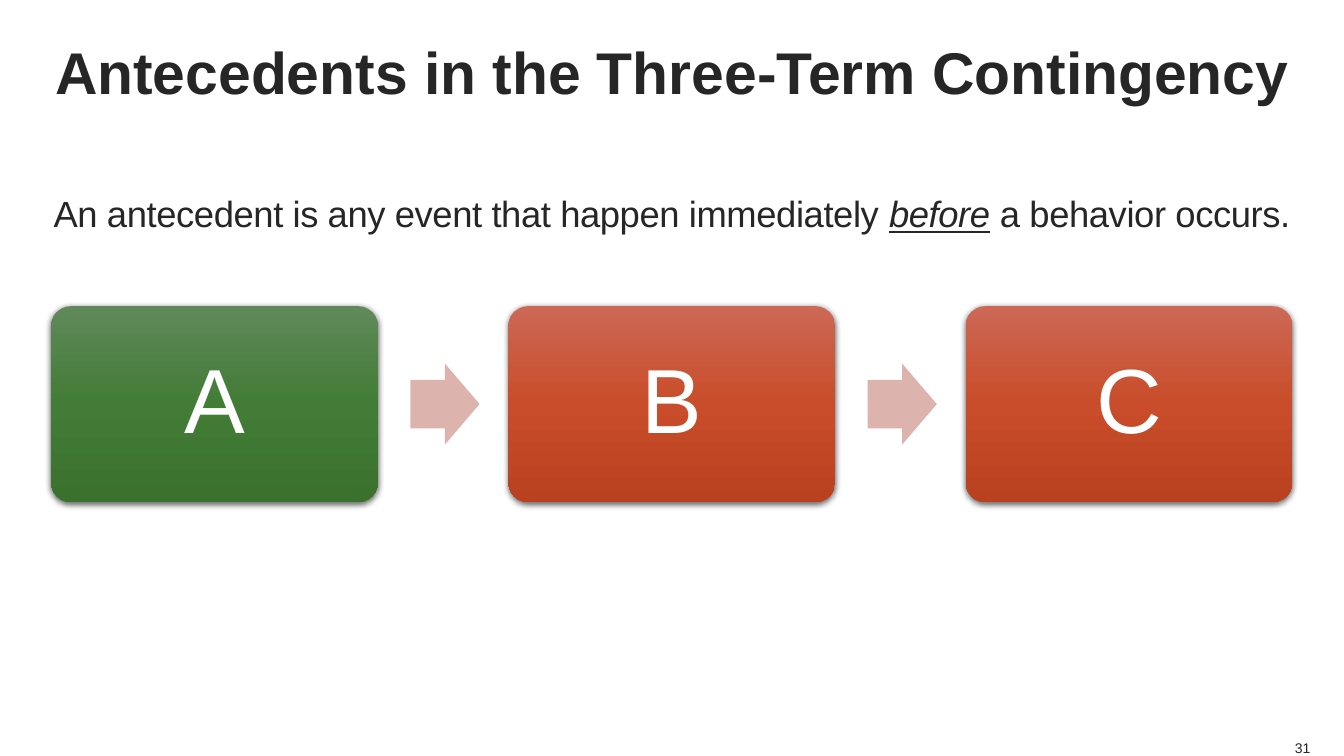
from pptx import Presentation
from pptx.dml.color import RGBColor
from pptx.enum.shapes import MSO_SHAPE as Preset
from pptx.enum.text import MSO_ANCHOR as Anchor, MSO_AUTO_SIZE as AutoSize, PP_ALIGN as Align
from pptx.oxml.ns import qn
from pptx.util import Pt
from lxml.etree import SubElement

FONT = "Arial"
COLORS = {
    "ink": "262626",
    "white": "FFFFFF",
    "arrow": "DDB3AE",
    "shadow": "000000",
}
GRADIENTS = {
    "green": ("60895A", "427C36", "39712D"),
    "red": ("CC6855", "C94D2A", "B9411F"),
}


def place(shape, left, top, width, height):
    shape.left, shape.top = Pt(left), Pt(top)
    shape.width, shape.height = Pt(width), Pt(height)


def prepare_frame(shape, anchor, margin=0, wrap=True):
    frame = shape.text_frame
    frame.word_wrap = wrap
    frame.auto_size = AutoSize.NONE
    frame.vertical_anchor = anchor
    frame.margin_left = frame.margin_right = Pt(margin)
    frame.margin_top = frame.margin_bottom = Pt(margin)
    return frame.paragraphs[0]


def style(para, size, color="ink", align=Align.CENTER, bold=False):
    para.alignment = align
    font = para.font
    font.name, font.size, font.bold = FONT, Pt(size), bold
    font.color.rgb = RGBColor.from_string(COLORS[color])


def add_title(page, left, top, width, height):
    title = page.shapes.title
    place(title, left, top, width, height)
    para = prepare_frame(title, Anchor.MIDDLE)
    para.text = "Antecedents in the Three-Term Contingency"
    style(para, 42, bold=True)


def add_definition(page, left, top, width, height):
    box = page.shapes.add_textbox(Pt(left), Pt(top), Pt(width), Pt(height))
    para = prepare_frame(box, Anchor.TOP)
    para.line_spacing = 1.25
    style(para, 26)
    parts = (
        ("An antecedent is any event that happen immediately ", False),
        ("before", True),
        (" a behavior occurs.", False),
    )
    for text, stressed in parts:
        span = para.add_run()
        span.text = text
        span.font.italic = span.font.underline = stressed
        span.font._element.set("spc", "-30")


def fill_gradient(shape, colors):
    shape.fill.gradient()
    shape.fill.gradient_angle = 270
    stops = shape._element.spPr.find(f".//{qn('a:gsLst')}")
    for stop in list(stops):
        stops.remove(stop)
    for index, color in enumerate(colors):
        stop = SubElement(stops, qn("a:gs"), pos=str(index * 50000))
        SubElement(stop, qn("a:srgbClr"), val=color)


def add_shadow(shape):
    shape.shadow.inherit = False
    effects = shape._element.spPr.find(qn("a:effectLst"))
    shadow = SubElement(effects, qn("a:outerShdw"), blurRad=str(Pt(4.5)),
                        dist=str(Pt(1.5)), dir="5400000", rotWithShape="0")
    color = SubElement(shadow, qn("a:srgbClr"), val=COLORS["shadow"])
    SubElement(color, qn("a:alpha"), val="63000")


def add_card(page, letter, gradient, left, top, width, height):
    card = page.shapes.add_shape(Preset.ROUNDED_RECTANGLE, Pt(left), Pt(top), Pt(width), Pt(height))
    card.adjustments[0] = 0.1
    fill_gradient(card, GRADIENTS[gradient])
    card.line.fill.background()
    add_shadow(card)
    para = prepare_frame(card, Anchor.MIDDLE, margin=20)
    para.text = letter
    para.line_spacing = 0.9
    style(para, 65, "white")


def add_arrow(page, left, top, width, height):
    arrow = page.shapes.add_shape(Preset.RIGHT_ARROW, Pt(left), Pt(top), Pt(width), Pt(height))
    arrow.adjustments[0], arrow.adjustments[1] = 0.6, 0.5
    arrow.fill.solid()
    arrow.fill.fore_color.rgb = RGBColor.from_string(COLORS["arrow"])
    arrow.line.fill.background()
    arrow.shadow.inherit = False


def add_contingency(page, left, top, width, height):
    cards = (("A", "green"), ("B", "red"), ("C", "red"))
    card_width, arrow_width, arrow_height = 233.3, 49.5, 57.8
    step = (width - card_width) / (len(cards) - 1)
    arrow_offset = card_width + 23.2
    for index, (letter, gradient) in enumerate(cards):
        card_left = left + index * step
        if index:
            add_arrow(page, card_left - step + arrow_offset,
                      top + (height - arrow_height) / 2, arrow_width, arrow_height)
        add_card(page, letter, gradient, card_left, top, card_width, height)


def add_page_number(page, left, top, width, height):
    box = page.shapes.add_textbox(Pt(left), Pt(top), Pt(width), Pt(height))
    para = prepare_frame(box, Anchor.BOTTOM, wrap=False)
    para.text = "31"
    style(para, 10, align=Align.RIGHT)


def main():
    deck = Presentation()
    deck.slide_width, deck.slide_height = Pt(960), Pt(540)
    page = deck.slides.add_slide(deck.slide_layouts[5])
    add_title(page, 36, 0, 888, 101)
    add_definition(page, 36, 129, 888, 93.6)
    add_contingency(page, 36.6, 218.7, 886.5, 139.9)
    add_page_number(page, 924, 528, 12, 12)
    deck.save("out.pptx")


if __name__ == "__main__":
    main()
